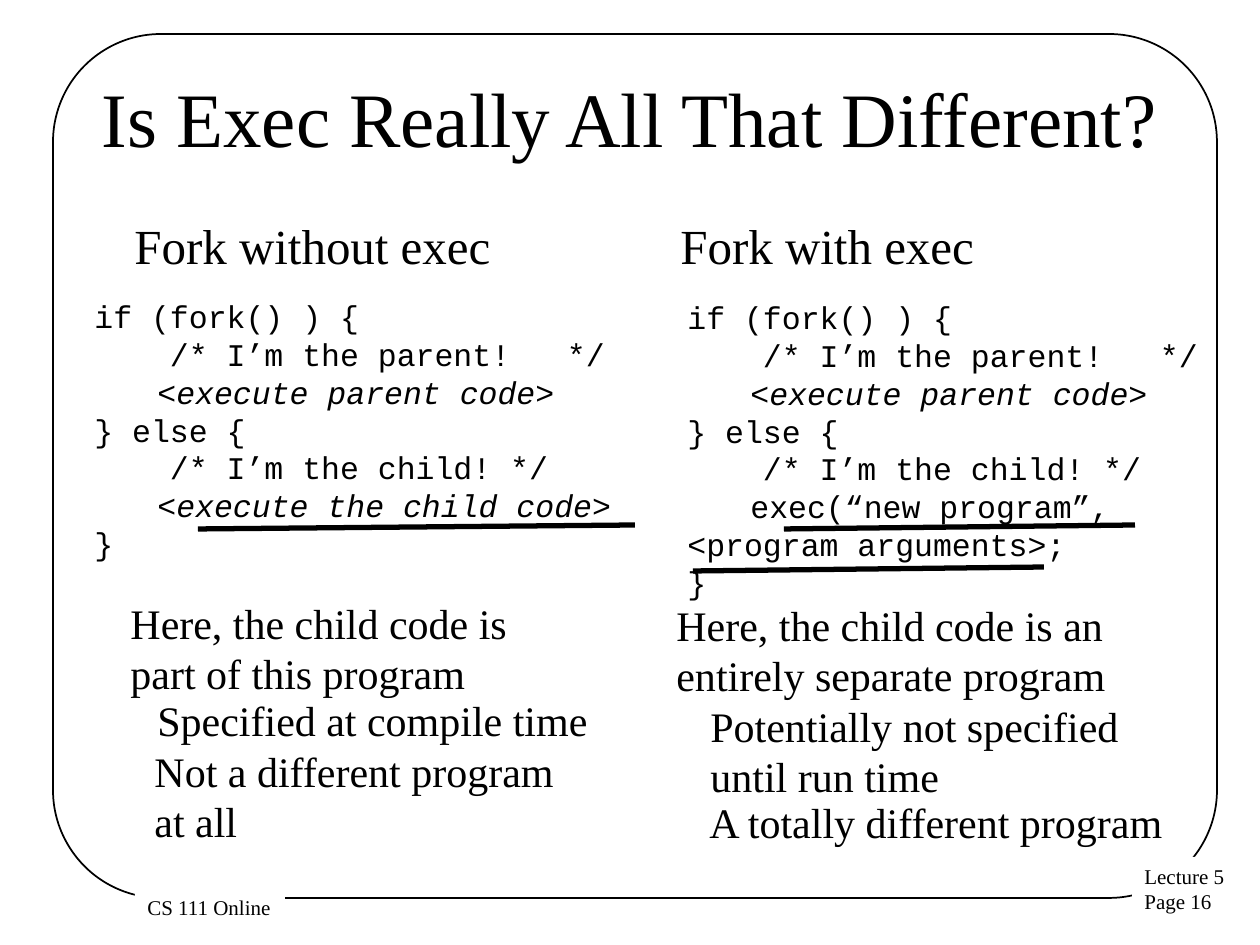
from dataclasses import dataclass

from lxml import etree
from pptx import Presentation
from pptx import util as u
from pptx.dml.color import RGBColor
from pptx.enum import shapes, text
from pptx.oxml import ns

SCALE = 914400 / 126  # EMU per px
COLORS = {"ink": "000000", "paper": "FFFFFF"}
SERIF, MONO = "Times New Roman", "Courier New"
TAB = 63


@dataclass
class Label:
    x: int
    y: int
    w: int
    h: int
    size: int
    lines: tuple
    font: str = SERIF


@dataclass
class Stroke:
    x: int
    y: int
    w: int
    rise: int = 4


def px(n: int) -> int:
    return u.Emu(round(n * SCALE))


def rgb(name: str) -> RGBColor:
    return RGBColor.from_string(COLORS[name])


def set_tab(para) -> None:
    stops = etree.SubElement(para._p.get_or_add_pPr(), ns.qn("a:tabLst"))
    etree.SubElement(stops, ns.qn("a:tab"), pos=str(px(TAB)), algn="l")


def add_label(slide, item: Label, fill: str = ""):
    """Draw text; a line given as a tuple is a plain part and an italic part."""
    box = slide.shapes.add_textbox(px(item.x), px(item.y), px(item.w), px(item.h))
    if fill:
        box.fill.solid()
        box.fill.fore_color.rgb = rgb(fill)
    frame = box.text_frame
    frame.word_wrap = True
    for i, line in enumerate(item.lines):
        para = frame.add_paragraph() if i else frame.paragraphs[0]
        if isinstance(line, tuple):
            for part in line:
                para.add_run().text = part
            para.runs[-1].font.italic = True
        else:
            para.text = line
        if item.font == MONO:
            set_tab(para)
        for run in para.runs:
            run.font.name = item.font
            run.font.size = u.Pt(item.size)
            run.font.color.rgb = rgb("ink")
    return box


def add_stroke(slide, item: Stroke) -> None:
    line = slide.shapes.add_connector(
        shapes.MSO_CONNECTOR.STRAIGHT,
        px(item.x), px(item.y), px(item.x + item.w), px(item.y - item.rise))
    line.line.color.rgb = rgb("ink")
    line.line.width = u.Pt(3)
    etree.SubElement(line._element.spPr, ns.qn("a:effectLst"))


def add_frame(slide) -> None:
    box = slide.shapes.add_shape(
        shapes.MSO_SHAPE.ROUNDED_RECTANGLE, px(53), px(34), px(1164), px(864))
    box.adjustments[0] = 0.125
    box.shadow.inherit = False
    box.fill.background()
    box.line.color.rgb = rgb("ink")
    box.line.width = u.Pt(1)


def code(*child) -> tuple:
    return ("if (fork() ) {", "    /* I’m the parent!   */",
            ("\t<", "execute parent code>"),
            "} else {", "    /* I’m the child! */", *child, "}")


FOOTERS = (
    Label(1132, 857, 106, 64, 12, ("Lecture 5", "Page 16")),
    Label(135, 888, 150, 38, 12, ("CS 111 Online",)),
)
TITLE = Label(63, 38, 1134, 158, 44, ("Is Exec Really All That Different?",))
LABELS = (
    # Code listings
    Label(82, 291, 590, 318, 18, code(("\t<", "execute the child code>")), MONO),
    Label(675, 292, 547, 394, 18,
          code("\texec(“new program”, <program arguments>;"), MONO),
    # Column heads
    Label(122, 209, 386, 72, 28, ("Fork without exec",)),
    Label(668, 209, 323, 72, 28, ("Fork with exec",)),
    # Left remarks
    Label(118, 591, 460, 115, 24, ("Here, the child code is part of this program",)),
    Label(145, 688, 460, 63, 24, ("Specified at compile time",)),
    Label(142, 739, 460, 115, 24, ("Not a different program at all",)),
    # Right remarks
    Label(664, 593, 460, 115, 24,
          ("Here, the child code is an entirely separate program",)),
    Label(698, 694, 460, 115, 24, ("Potentially not specified until run time",)),
    Label(697, 790, 499, 63, 24, ("A totally different program",)),
)
STROKES = (Stroke(198, 529, 437), Stroke(784, 529, 351), Stroke(693, 571, 351))


def main() -> None:
    deck = Presentation()
    deck.slide_width, deck.slide_height = px(1260), px(945)
    slide = deck.slides.add_slide(deck.slide_layouts[6])

    # Border and footers
    add_frame(slide)
    for item in FOOTERS:
        add_label(slide, item, "paper")

    # Title
    title = add_label(slide, TITLE).text_frame
    title.vertical_anchor = text.MSO_ANCHOR.MIDDLE
    title.paragraphs[0].alignment = text.PP_ALIGN.CENTER

    # Columns and underlines
    for item in LABELS:
        add_label(slide, item)
    for item in STROKES:
        add_stroke(slide, item)
    deck.save("out.pptx")


if __name__ == "__main__":
    main()
